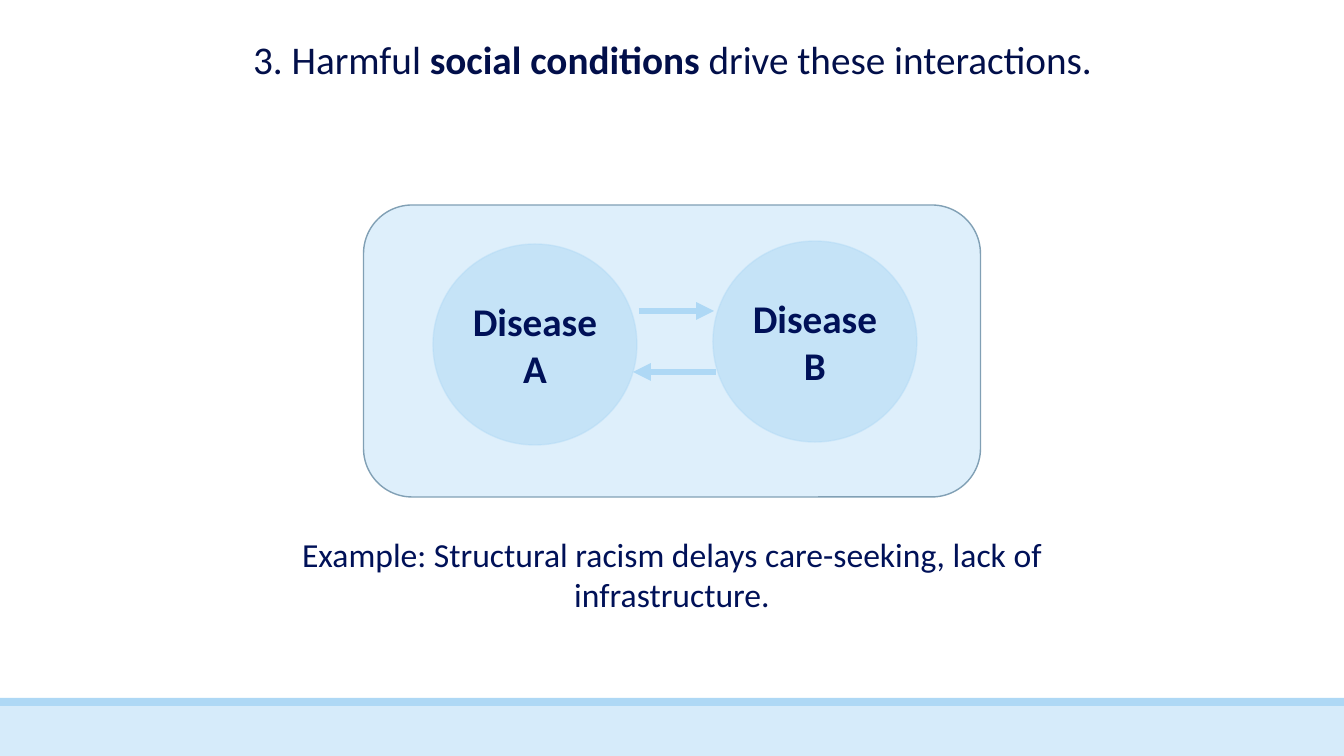
from lxml import etree
from pptx import Presentation
from pptx import util as u
from pptx.dml.color import RGBColor
from pptx.enum import shapes, text
from pptx.oxml import ns

COLORS = {"title": "020F4A", "body": "001158", "sky": "AED8F5",
          "footer": "D6EBFA", "outline": "81A0B5"}
FONT = "Calibri"
TITLE = [("3. Harmful ", False), ("social conditions ", True),
         ("drive these interactions.", False)]
CAPTION = [("Example: Structural racism delays care-seeking, lack of infrastructure.", False)]
BANDS = [("footer", 706, 50), ("sky", 698, 8)]
DISEASES = [("Disease A", 433, 244), ("Disease B", 713, 241)]
ARROWS = [(639, 714, 311), (716, 633, 372)]
WIDTH, HEIGHT = 1344, 756
CIRCLE_W, CIRCLE_H = 204, 201
PANEL_TOP, PANEL_W, PANEL_H = 205, 617, 292


def px(n):
    return u.Emu(round(n * 914400 / 100.8))


def color(name):
    return RGBColor.from_string(COLORS[name])


def set_alpha(fill_parent, percent):
    tint = fill_parent.find(ns.qn("a:solidFill")).find(ns.qn("a:srgbClr"))
    etree.SubElement(tint, ns.qn("a:alpha")).set("val", str(percent * 1000))


def add_block(page, kind, left, top, width, height, fill, alpha=None, line=None):
    block = page.shapes.add_shape(kind, px(left), px(top), px(width), px(height))
    block.shadow.inherit = False
    block.fill.solid()
    block.fill.fore_color.rgb = color(fill)
    if alpha:
        set_alpha(block._element.spPr, alpha)
    if line:
        block.line.color.rgb = color(line)
        block.line.width = u.Pt(1)
    else:
        block.line.fill.background()
    return block


def write(box, runs, size, tone, anchor):
    frame = box.text_frame
    frame.word_wrap = True
    frame.auto_size = text.MSO_AUTO_SIZE.NONE
    frame.vertical_anchor = anchor
    para = frame.paragraphs[0]
    para.alignment = text.PP_ALIGN.CENTER
    for words, bold in runs:
        span = para.add_run()
        span.text = words
        span.font.name = FONT
        span.font.size = u.Pt(size)
        span.font.bold = bold
        span.font.color.rgb = color(tone)


def add_disease(page, name, left, top):
    circle = add_block(page, shapes.MSO_SHAPE.OVAL, left, top, CIRCLE_W, CIRCLE_H,
                       "sky", 50, "sky")
    set_alpha(circle._element.spPr.find(ns.qn("a:ln")), 40)
    frame = circle.text_frame
    frame.margin_left = frame.margin_right = px(4)
    frame.margin_top = frame.margin_bottom = px(5)
    write(circle, [(name, True)], 28, "body", text.MSO_ANCHOR.MIDDLE)


def add_arrow(page, start, end, y):
    arrow = page.shapes.add_connector(shapes.MSO_CONNECTOR.STRAIGHT,
                                      px(start), px(y), px(end), px(y))
    arrow.line.color.rgb = color("sky")
    arrow.line.width = u.Pt(4.25)
    outline = arrow.line._get_or_add_ln()
    etree.SubElement(outline, ns.qn("a:tailEnd")).set("type", "triangle")
    etree.SubElement(arrow._element.spPr, ns.qn("a:effectLst"))


def main():
    deck = Presentation()
    deck.slide_width, deck.slide_height = px(WIDTH), px(HEIGHT)
    page = deck.slides.add_slide(deck.slide_layouts[5])

    for fill, top, height in BANDS:
        add_block(page, shapes.MSO_SHAPE.RECTANGLE, 0, top, WIDTH, height, fill)

    title = page.shapes.title
    title.left, title.top, title.width, title.height = map(px, (180, 30, 985, 57))
    write(title, TITLE, 28, "title", text.MSO_ANCHOR.TOP)

    add_block(page, shapes.MSO_SHAPE.ROUNDED_RECTANGLE, (WIDTH - PANEL_W) / 2, PANEL_TOP,
              PANEL_W, PANEL_H, "sky", 40, "outline")
    for disease in DISEASES:
        add_disease(page, *disease)
    for arrow in ARROWS:
        add_arrow(page, *arrow)

    caption = page.shapes.add_textbox(px(207), px(529), px(930), px(92))
    write(caption, CAPTION, 24, "body", text.MSO_ANCHOR.TOP)

    deck.save("out.pptx")


if __name__ == "__main__":
    main()
